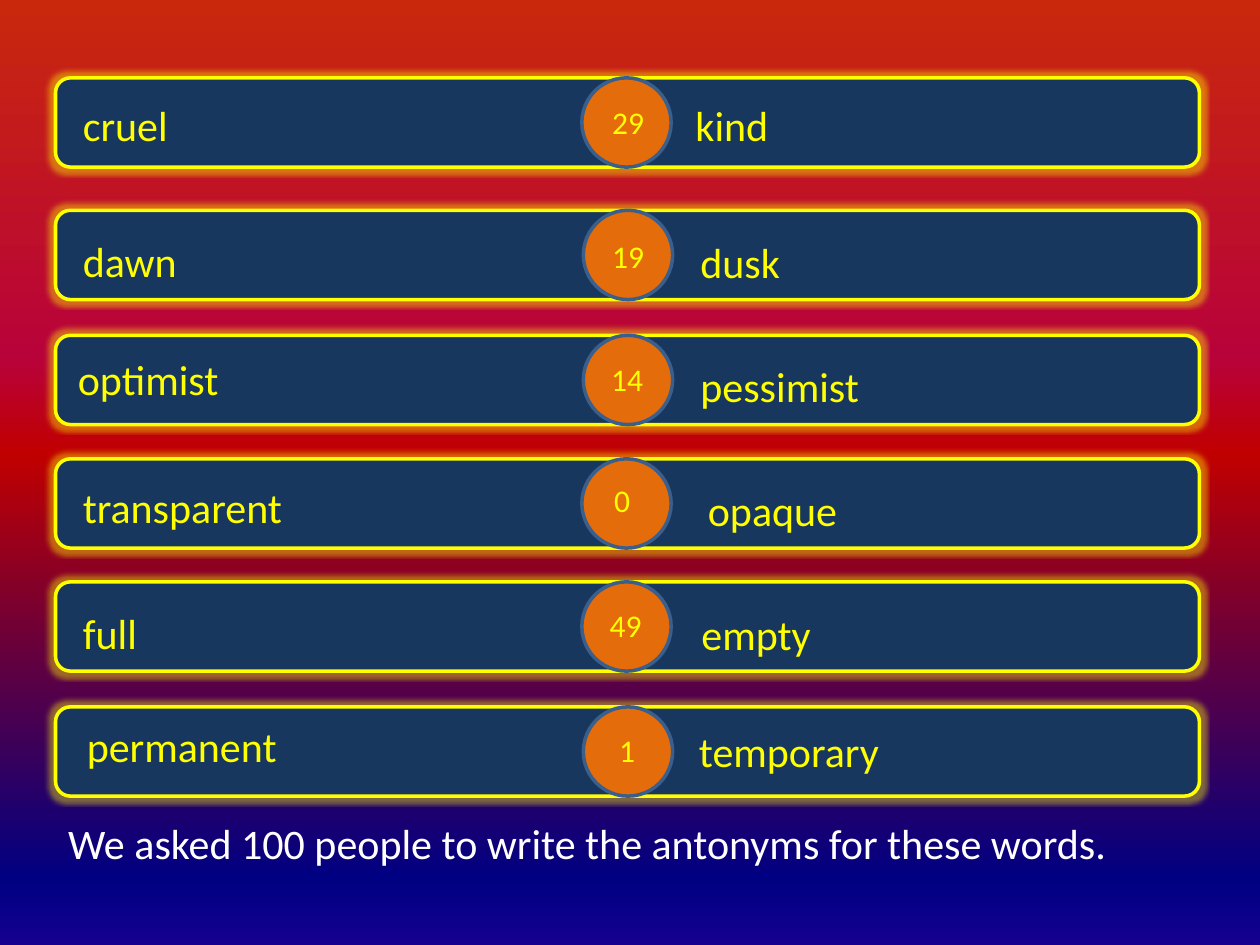
from lxml import etree
from pptx import Presentation, util as u
from pptx.dml.color import RGBColor
from pptx.enum import shapes, text
from pptx.oxml.ns import qn

YELLOW, WHITE, NAVY, ORANGE, BLUE = "FFFF00", "FFFFFF", "17375E", "E46C0A", "3A5F8C"
STOPS = [(0, "C9280D"), (38, "B8023A"), (48, "C00000"), (93, "000082"), (100, "150090")]
CAPTION = "We asked 100 people to write the antonyms for these words."

ROWS = [
    (1.57, 11.73, ("cruel", 1.42, 1.88, 3.05), ("kind", 13.77, 1.88, 2.72), ("29", 12.09, 1.96)),
    (4.24, 11.76, ("dawn", 1.42, 4.62, 3.05), ("dusk", 13.87, 4.65, 2.79), ("19", 12.09, 4.65)),
    (6.76, 11.76, ("optimist", 1.32, 7.01, 6.78), ("pessimist", 13.87, 7.14, 4.24), ("14", 12.07, 7.14)),
    (9.25, 11.73, ("transparent", 1.42, 9.58, 5.26), ("opaque", 14.02, 9.65, 3.48), (" 0", 11.99, 9.58)),
    (11.73, 11.73, ("full", 1.42, 12.12, 1.88), ("empty", 13.89, 12.14, 3.2), ("49", 12.04, 12.09)),
    (14.25, 11.76, ("permanent", 1.5, 14.4, 5.99), ("temporary", 13.84, 14.5, 5.05), (" 1", 12.09, 14.61)),
]
BAR_LEFT, BAR_WIDTH, HEIGHT = 1.12, 23.06, 1.8


def rgb(value):
    return RGBColor.from_string(value)


def place(sp, left, top, width, height):
    sp.left, sp.top, sp.width, sp.height = (u.Cm(v) for v in (left, top, width, height))


def write(sp, words, size=24, color=YELLOW):
    tf = sp.text_frame
    tf.word_wrap = True
    tf.auto_size = text.MSO_AUTO_SIZE.SHAPE_TO_FIT_TEXT
    tf.vertical_anchor = text.MSO_ANCHOR.TOP
    p = tf.paragraphs[0]
    p.alignment = text.PP_ALIGN.LEFT
    r = p.add_run()
    r.text = words
    r.font.name, r.font.size = "Calibri", u.Pt(size)
    r.font.color.rgb = rgb(color)


def add_label(s, words, left, top, width=1.19, height=1.27, size=24):
    sp = s.shapes.add_textbox(*(u.Cm(v) for v in (left, top, width, height)))
    write(sp, words, size=size)


def add_panel(s, kind, left, top, width, fill, line):
    sp = s.shapes.add_shape(kind, *(u.Cm(v) for v in (left, top, width, HEIGHT)))
    sp.shadow.inherit = False
    sp.fill.solid()
    sp.fill.fore_color.rgb = rgb(fill)
    sp.line.color.rgb = rgb(line)
    sp.line.width = u.Pt(2)
    return sp


def add_color(parent, value):
    return etree.SubElement(parent, qn("a:srgbClr"), val=value)


def add_glow(sp, color, radius, alpha):
    effects = sp._element.spPr.find(qn("a:effectLst"))
    glow = etree.SubElement(effects, qn("a:glow"), rad=str(u.Pt(radius)))
    etree.SubElement(add_color(glow, color), qn("a:alpha"), val=str(alpha * 1000))


def set_background(s, stops):
    fill = s.background.fill
    fill.gradient()
    fill.gradient_angle = 270
    gs_list = s._element.find(".//" + qn("a:gsLst"))
    for gs in list(gs_list):
        gs_list.remove(gs)
    for position, color in stops:
        add_color(etree.SubElement(gs_list, qn("a:gs"), pos=str(position * 1000)), color)


def main():
    prs = Presentation()
    prs.slide_width, prs.slide_height = u.Cm(25.4), u.Cm(19.05)
    s = prs.slides.add_slide(prs.slide_layouts[5])
    set_background(s, STOPS)
    for top, circle_left, word, antonym, count in ROWS:
        bar = add_panel(s, shapes.MSO_SHAPE.ROUNDED_RECTANGLE, BAR_LEFT, top, BAR_WIDTH, NAVY, YELLOW)
        add_glow(bar, YELLOW, radius=5, alpha=40)
        add_panel(s, shapes.MSO_SHAPE.OVAL, circle_left, top, HEIGHT, ORANGE, BLUE)
        add_label(s, *word)
        add_label(s, *antonym)
        add_label(s, *count, height=1.02, size=18)
    title = s.shapes.title
    place(title, 1.12, 16.36, 21.59, 1.27)
    write(title, CAPTION, color=WHITE)
    prs.save("out.pptx")


if __name__ == "__main__":
    main()
